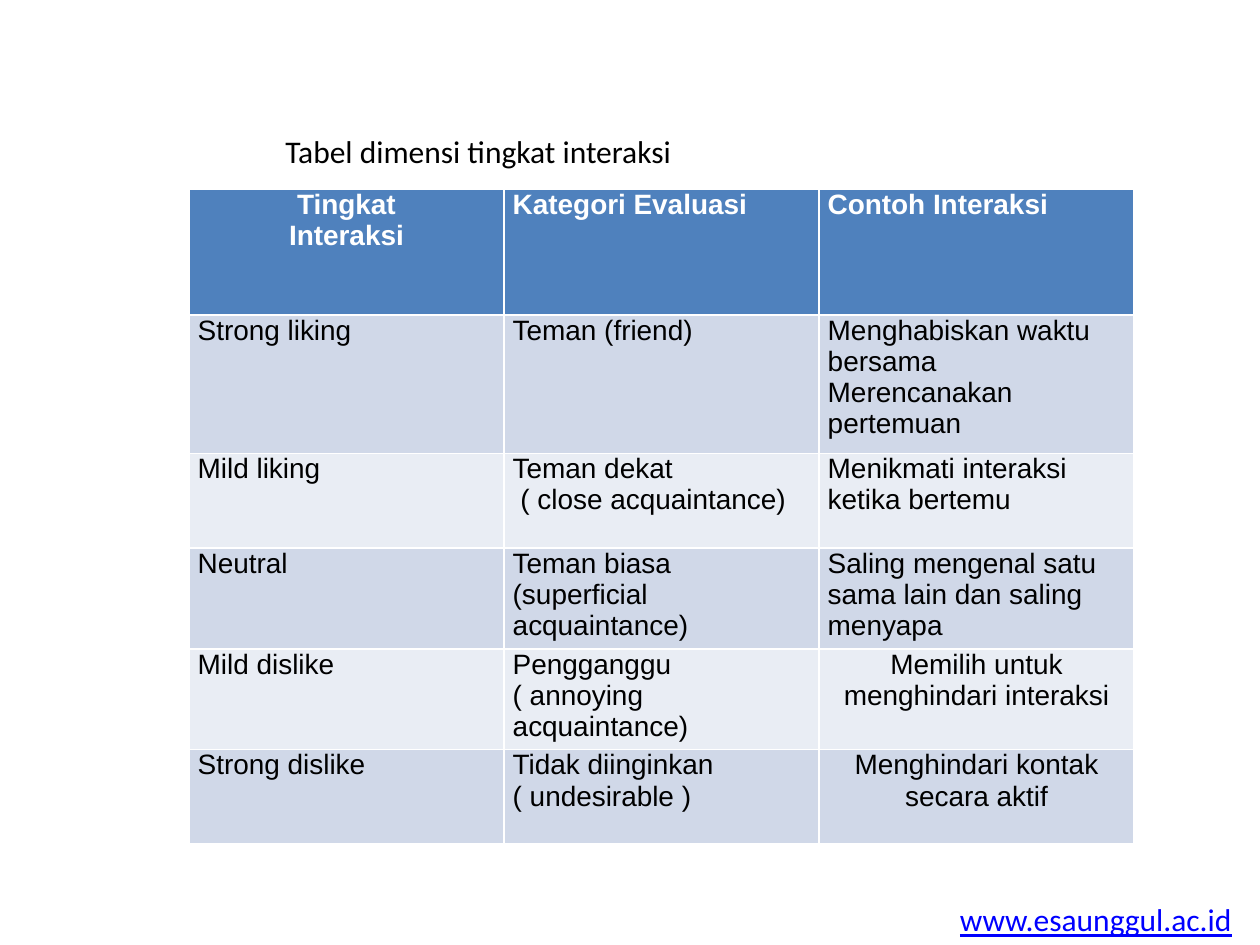
from pptx import Presentation
from pptx.dml.color import RGBColor
from pptx.enum.text import MSO_AUTO_SIZE, PP_ALIGN
from pptx.util import Pt

LEFT, CENTER = PP_ALIGN.LEFT, PP_ALIGN.CENTER
FIT_SHAPE = MSO_AUTO_SIZE.SHAPE_TO_FIT_TEXT

WHITE = RGBColor(0xFF, 0xFF, 0xFF)
BLACK = RGBColor(0x00, 0x00, 0x00)
LINK_BLUE = RGBColor(0x00, 0x00, 0xFF)
HEADER_BLUE = RGBColor(0x4F, 0x81, 0xBD)
BANDS = (RGBColor(0xD0, 0xD8, 0xE8), RGBColor(0xE9, 0xED, 0xF4))

ROWS = [
    ("Tingkat\nInteraksi", "Kategori Evaluasi", "Contoh Interaksi"),
    ("Strong liking", "Teman (friend)",
     "Menghabiskan waktu bersama\nMerencanakan pertemuan"),
    ("Mild liking", "Teman dekat\n ( close acquaintance)",
     "Menikmati interaksi ketika bertemu"),
    ("Neutral", "Teman biasa\n(superficial acquaintance)",
     "Saling mengenal satu sama lain dan saling menyapa"),
    ("Mild dislike", "Pengganggu\n( annoying acquaintance)",
     "Memilih untuk menghindari interaksi"),
    ("Strong dislike", "Tidak diinginkan\n( undesirable )",
     "Menghindari kontak secara aktif"),
]
ROW_HEIGHTS = (72, 79.2, 54, 54, 54, 54)
COLUMN_WIDTH = 180
CENTERED_CELLS = {(0, 0), (4, 2), (5, 2)}


def add_label(s, text, left, top, width, color, underline=False):
    tf = s.shapes.add_textbox(Pt(left), Pt(top), Pt(width), Pt(29)).text_frame
    tf.word_wrap = False
    tf.auto_size = FIT_SHAPE
    p = tf.paragraphs[0]
    p.text = text
    p.font.name = "Calibri"
    p.font.size = Pt(18)
    p.font.color.rgb = color
    p.font.underline = underline


prs = Presentation()
prs.slide_width, prs.slide_height = Pt(720), Pt(540)
s = prs.slides.add_slide(prs.slide_layouts[6])

add_label(s, "www.esaunggul.ac.id", 541.5, 511, 171.5, LINK_BLUE, underline=True)

# The default table style supplies the white cell borders.
table = s.shapes.add_table(len(ROWS), 3, Pt(108), Pt(108),
                           Pt(3 * COLUMN_WIDTH), Pt(sum(ROW_HEIGHTS))).table
for column in table.columns:
    column.width = Pt(COLUMN_WIDTH)
for i, (texts, height) in enumerate(zip(ROWS, ROW_HEIGHTS)):
    table.rows[i].height = Pt(height)
    header = i == 0
    for j, text in enumerate(texts):
        cell = table.cell(i, j)
        cell.fill.solid()
        cell.fill.fore_color.rgb = HEADER_BLUE if header else BANDS[(i - 1) % 2]
        cell.margin_left = cell.margin_right = Pt(5)
        cell.margin_top = cell.margin_bottom = Pt(0)
        cell.text_frame.text = text
        for p in cell.text_frame.paragraphs:
            p.alignment = CENTER if (i, j) in CENTERED_CELLS else LEFT
            p.font.name = "Arial"
            p.font.size = Pt(16)
            p.font.bold = header
            p.font.color.rgb = WHITE if header else BLACK

add_label(s, "Tabel dimensi tingkat interaksi", 156, 72, 237.5, BLACK)

prs.save("out.pptx")
